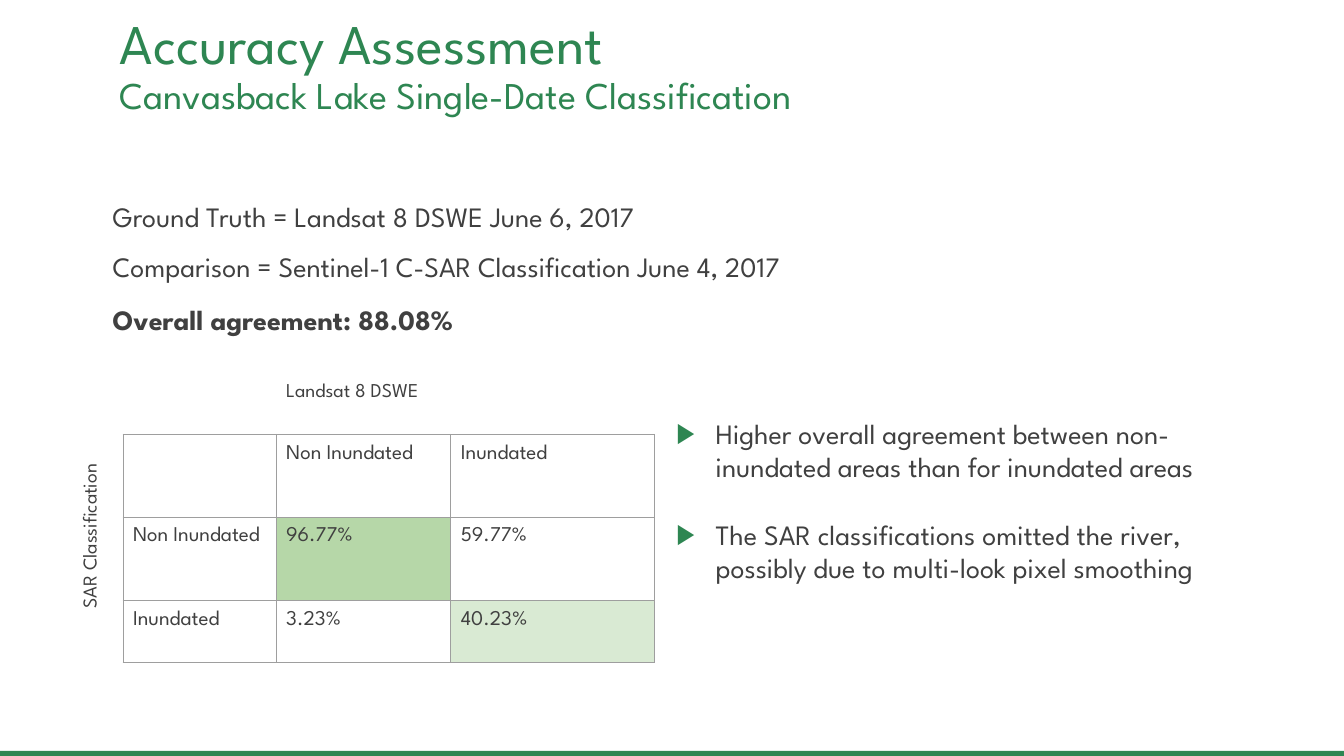
"""Build the accuracy assessment slide."""
from lxml.etree import SubElement as Sub
from pptx import Presentation
from pptx.dml.color import RGBColor as RGB
from pptx.enum.shapes import MSO_SHAPE as Geom
from pptx.enum.text import MSO_ANCHOR as Anchor, MSO_AUTO_SIZE as Auto, PP_ALIGN as Align
from pptx.oxml.ns import qn
from pptx.util import Inches, Pt

WIDE, HIGH = Inches(13.33), Inches(7.5)
COL, ROW = WIDE / 40, HIGH / 30
FACE, GREEN, DARK, GREY = "League Spartan", "2E8652", "404040", "9E9E9E"
PAD = Inches(0.1)
TINTS = {(2, 1): "B6D7A8", (3, 2): "D9EAD3"}
GRID = [
    ["", "Landsat 8 DSWE", ""],
    ["", "Non Inundated", "Inundated"],
    ["Non Inundated", "96.77%", "59.77%"],
    ["Inundated", "3.23%", "40.23%"],
]
WIDTHS, HEIGHTS = [4.56, 5.2, 6.06], [2.4, 3.28, 3.3, 2.48]
FACTS = ["Ground Truth = Landsat 8 DSWE June 6, 2017",
         "Comparison = Sentinel-1 C-SAR Classification June 4, 2017"]
NOTES = ["Higher overall agreement between non-inundated areas than for inundated areas",
         "The SAR classifications omitted the river, possibly due to multi-look pixel smoothing"]


def paint(target, tone):
    """Give a fill or a font a solid colour."""
    if hasattr(target, "solid"):
        target.solid()
        target.fore_color.rgb = RGB.from_string(tone)
    else:
        target.color.rgb = RGB.from_string(tone)


def box(left, top, wide, high):
    """Turn grid columns and rows into slide lengths."""
    return [round(n * unit) for n, unit in zip((left, top, wide, high), (COL, ROW) * 2)]


def apply(item, form):
    """Set each value of a format dict on an object."""
    for key, value in form.items():
        setattr(item, key, value)


def style(para, size, tone=DARK, bold=False, **form):
    """Format a paragraph and its font."""
    apply(para, {"alignment": Align.LEFT, "space_before": Pt(0), **form})
    apply(para.font, {"size": Pt(size), "name": FACE, "bold": bold})
    paint(para.font, tone)


def frame(shape, pad=PAD, anchor=Anchor.TOP):
    """Set the wrap, anchor and margins of a shape's text."""
    text = shape.text_frame
    apply(text, {"word_wrap": True, "auto_size": Auto.NONE, "vertical_anchor": anchor,
                 "margin_left": PAD, "margin_right": PAD,
                 "margin_top": pad, "margin_bottom": pad})
    return text


def place(shape, area):
    """Move a placeholder to a grid area."""
    apply(shape, dict(zip(("left", "top", "width", "height"), box(*area))))


def label(slide, area, lines, size, turn=0, pad=PAD, **form):
    """Add a text box with one paragraph a line."""
    shape = slide.shapes.add_textbox(*box(*area))
    shape.rotation = turn
    text = frame(shape, pad)
    text.text = "\n".join(lines)
    for para in text.paragraphs:
        style(para, size, **form)


def heading(slide):
    """Fill the title with a main and a lower line."""
    place(slide.shapes.title, (3.27, 1.6, 30.87, 2.08))
    text = frame(slide.shapes.title, PAD / 2, Anchor.MIDDLE)
    text.text = "Accuracy Assessment\nCanvasback Lake Single-Date Classification"
    for para, size in zip(text.paragraphs, (40, 27)):
        style(para, size, GREEN, line_spacing=0.9)


def bullets(slide):
    """Fill the body with green arrow bullets."""
    body = slide.placeholders[1]
    place(body, (19.5, 16.12, 16.92, 11.6))
    text = frame(body)
    text.text = "\n".join(NOTES)
    for rank, para in enumerate(text.paragraphs):
        props = para._p.get_or_add_pPr()
        props.set("marL", str(Inches(0.5)))
        props.set("indent", str(Inches(-0.39)))
        Sub(Sub(props, qn("a:buClr")), qn("a:srgbClr"), val=GREEN)
        Sub(props, qn("a:buChar"), char="▶")
        style(para, 20, space_before=Pt(24 * rank))


def border(cell, sides):
    """Draw the named sides of a cell and hide the others."""
    props = cell._tc.get_or_add_tcPr()
    for side in "LRTB":
        line = Sub(props, qn("a:ln" + side), w=str(Pt(0.75)))
        if side in sides:
            Sub(Sub(line, qn("a:solidFill")), qn("a:srgbClr"), val=GREY)
        else:
            Sub(line, qn("a:noFill"))


def matrix(slide):
    """Add the table that compares both classifications."""
    area = box(3.66, 14.84, sum(WIDTHS), sum(HEIGHTS))
    table = slide.shapes.add_table(len(HEIGHTS), len(WIDTHS), *area).table
    apply(table, {"first_row": False, "horz_banding": False})
    for col, wide in zip(table.columns, WIDTHS):
        col.width = round(wide * COL)
    for row, high in zip(table.rows, HEIGHTS):
        row.height = round(high * ROW)
    for r, texts in enumerate(GRID):
        for c, words in enumerate(texts):
            cell = table.cell(r, c)
            border(cell, "LRTB" if r else "B")
            if (r, c) in TINTS:
                paint(cell.fill, TINTS[r, c])
            else:
                cell.fill.background()
            apply(cell, {"text": words, "margin_left": PAD, "margin_right": PAD,
                         "margin_top": PAD, "margin_bottom": PAD})
            style(cell.text_frame.paragraphs[0], 15 if r else 14)
    table.cell(0, 1).merge(table.cell(0, 2))


def stripe(slide):
    """Add the green strip along the foot."""
    shape = slide.shapes.add_shape(Geom.RECTANGLE, *box(0, 29.8, 40, 0.2))
    shape.shadow.inherit = False
    paint(shape.fill, GREEN)
    shape.line.fill.background()


def main():
    """Build and save the slide."""
    deck = Presentation()
    apply(deck, {"slide_width": WIDE, "slide_height": HIGH})
    slide = deck.slides.add_slide(deck.slide_layouts[1])
    stripe(slide)
    heading(slide)
    matrix(slide)
    label(slide, (-0.45, 19.88, 5.94, 1.4), ["SAR Classification"], 14, turn=270)
    label(slide, (3.06, 11.6, 14.04, 1.24), ["Overall agreement: 88.08%"], 20, bold=True)
    bullets(slide)
    label(slide, (3.06, 7.04, 24.84, 4.44), FACTS, 20, pad=PAD / 2, line_spacing=1.5)
    deck.save("out.pptx")


if __name__ == "__main__":
    main()
